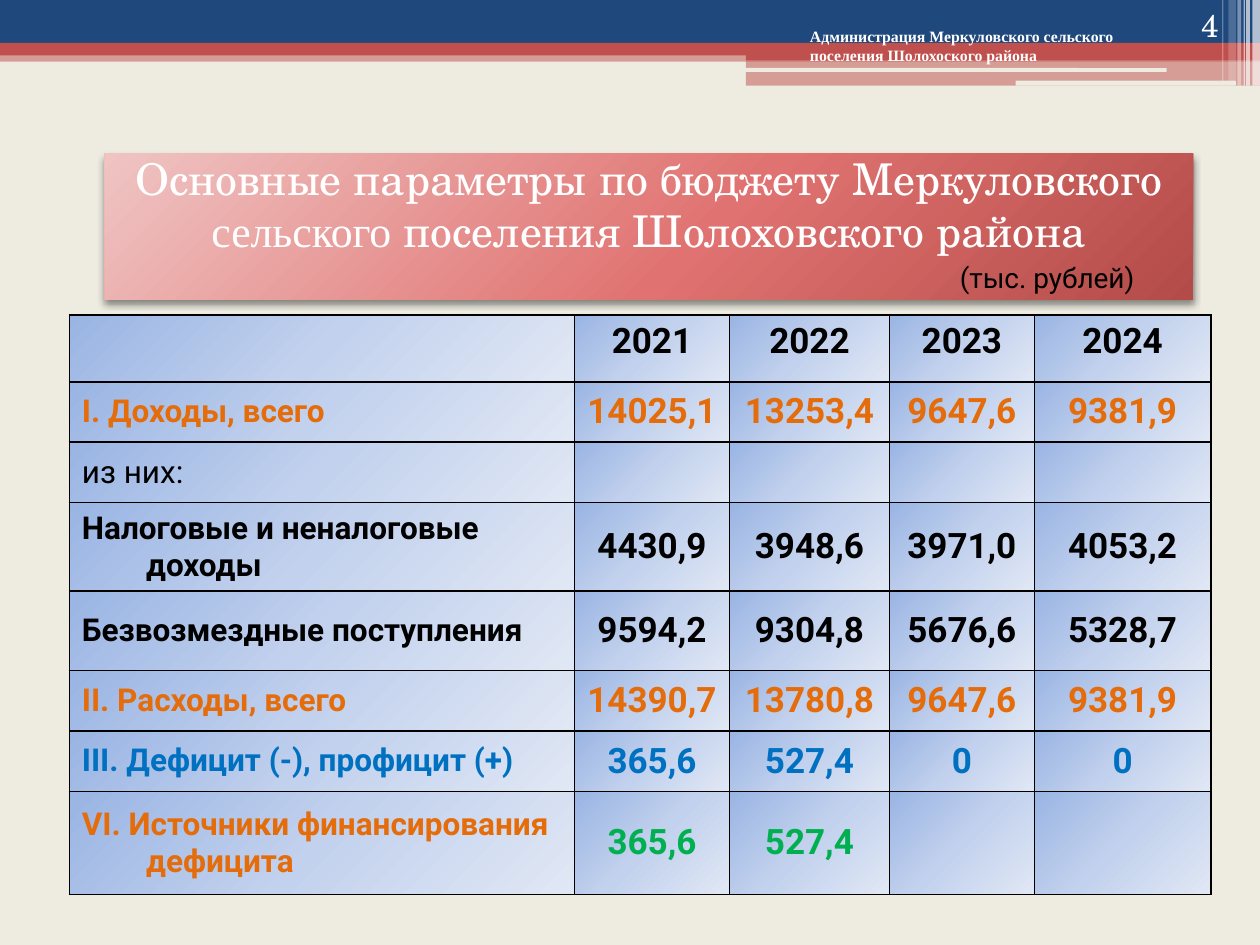
import dataclasses
import pptx
import pptx.util
import pptx.oxml
import pptx.oxml.ns
import pptx.dml.color
import pptx.enum.shapes
import pptx.enum.text

Kind = pptx.enum.shapes.MSO_SHAPE
Align = pptx.enum.text.PP_ALIGN
Anchor = pptx.enum.text.MSO_ANCHOR


@dataclasses.dataclass(frozen=True)
class Theme:
    cols: int = 100
    rows: int = 75
    cell: float = 0.1
    sand: str = "EEECE1"
    navy: str = "1F497D"
    red: str = "C0504D"
    white: str = "FFFFFF"
    black: str = "000000"
    amber: str = "E46C0A"
    blue: str = "0070C0"
    green: str = "00B050"
    rose: tuple = ((0, "EFC4C3"), (55, "E07371"), (100, "B34B48"))
    sky: tuple = ((0, "9AB5E4"), (50, "C2D1ED"), (100, "E1E8F5"))
    sans: str = "Roboto"
    serif: str = "TeX Gyre Schola"
    roman: str = "Times New Roman"
    head: int = 25
    value: int = 20
    label: int = 18
    unit: int = 16
    small: int = 9


T = Theme()


@dataclasses.dataclass(frozen=True)
class Box:
    x: float
    y: float
    w: float
    h: float

    def area(self, x, y, w, h):
        return Box(self.x + x, self.y + y, w, h)

    def place(self):
        return [grid(n) for n in (self.x, self.y, self.w, self.h)]


def grid(n):
    return pptx.util.Inches(n * T.cell)


def color(code):
    return pptx.dml.color.RGBColor.from_string(code)


def node(text):
    return pptx.oxml.parse_xml(text.replace(">", f" {pptx.oxml.ns.nsdecls('a')}>", 1))


def blend(stops, left, top, right, base):
    marks = "".join(
        f'<a:gs pos="{at * 1000}"><a:srgbClr val="{code}"/></a:gs>' for at, code in stops)
    return node(
        f'<a:gradFill rotWithShape="1"><a:gsLst>{marks}</a:gsLst><a:path path="circle">'
        f'<a:fillToRect l="{left * 1000}" t="{top * 1000}" r="{right * 1000}" '
        f'b="{base * 1000}"/></a:path></a:gradFill>')


def write(frame, text, font=T.sans, size=T.label, ink=T.black, bold=False,
          align=Align.LEFT, hang=0):
    para = frame.paragraphs[0]
    para.alignment = align
    if hang:
        props = para._p.get_or_add_pPr()
        props.set("marL", str(grid(hang)))
        props.set("indent", str(-grid(hang)))
    for words, face in [(text, font)] if isinstance(text, str) else text:
        run = para.add_run()
        run.text = words
        run.font.name = face
        run.font.size = pptx.util.Pt(size)
        run.font.bold = bold
        run.font.color.rgb = color(ink)


def note(slide, box, text, anchor=Anchor.TOP, **form):
    frame = slide.shapes.add_textbox(*box.place()).text_frame
    frame.word_wrap = True
    frame.vertical_anchor = anchor
    write(frame, text, **form)


def block(slide, box, fill, alpha=100, kind=Kind.RECTANGLE):
    shape = slide.shapes.add_shape(kind, *box.place())
    shape.shadow.inherit = False
    shape.line.fill.background()
    shape.fill.solid()
    shape.fill.fore_color.rgb = color(fill)
    if alpha < 100:
        tint = shape._element.spPr.find(".//" + pptx.oxml.ns.qn("a:srgbClr"))
        tint.append(node(f'<a:alpha val="{alpha * 1000}"></a:alpha>'))
    return shape


def header(slide, box):
    bands = (
        (0, 4, 100, 0.9, T.red, 50), (0, 0, 100, 3.4, T.navy, 100),
        (0, 3.4, 100, 1, T.red, 100), (59.2, 3.9, 40.8, 0.9, T.red, 100),
        (59.2, 4.8, 40.8, 2, T.red, 50))
    for *span, fill, alpha in bands:
        block(slide, box.area(*span), fill, alpha)
    for span in ((59.1, 5.4, 33.5, 0.3), (80.6, 6.4, 17.5, 0.4)):
        block(slide, box.area(*span), T.sand, kind=Kind.ROUNDED_RECTANGLE)
    bars = ((99.4, 0.6, 6.8, 65), (98.9, 0.3, 6.8, 65), (98.7, 0.1, 6.8, 60),
            (98.2, 0.3, 6.8, 40), (97.5, 0.6, 6.4, 20), (97, 0.1, 6.4, 30))
    for left, wide, tall, alpha in bars:
        block(slide, box.area(left, 0, wide, tall), T.white, alpha)
    note(slide, box.area(89.4, 0, 8.3, 4), "4", Anchor.BOTTOM,
         font=T.serif, ink=T.white, align=Align.RIGHT)
    note(slide, box.area(63.3, 1.6, 31.1, 4),
         "Администрация Меркуловского сельского поселения Шолохоского района",
         font=T.roman, size=T.small, ink=T.white, bold=True)


def title(slide, box):
    shape = block(slide, box, T.red)
    props = shape._element.spPr
    solid = props.find(pptx.oxml.ns.qn("a:solidFill"))
    props.replace(solid, blend(T.rose, -40, -90, 140, 190))
    props.find(pptx.oxml.ns.qn("a:effectLst")).append(node(
        '<a:outerShdw blurRad="50800" dist="25400" dir="5400000" rotWithShape="0">'
        f'<a:srgbClr val="{T.black}"><a:alpha val="45000"/></a:srgbClr></a:outerShdw>'))
    frame = shape.text_frame
    frame.word_wrap = True
    frame.vertical_anchor = Anchor.MIDDLE
    frame.margin_bottom = grid(4.1)
    write(frame, [("Основные параметры по бюджету Меркуловского ", T.serif),
                  ("сельского", T.roman),
                  (" поселения Шолоховского района", T.serif)],
          size=T.head, ink=T.white, align=Align.CENTER)


def ledger(slide, box):
    wide = (40.1, 12.3, 12.7, 11.5, 14)
    lines = (
        (5.3, T.black, T.black, "", "2021", "2022", "2023", "2024"),
        (4.8, T.amber, T.amber, "I. Доходы, всего", "14025,1", "13253,4", "9647,6", "9381,9"),
        (4.8, T.black, T.black, "из них:", "", "", "", ""),
        (5.6, T.black, T.black, "Налоговые и неналоговые доходы",
         "4430,9", "3948,6", "3971,0", "4053,2"),
        (6.3, T.black, T.black, "Безвозмездные поступления",
         "9594,2", "9304,8", "5676,6", "5328,7"),
        (4.8, T.amber, T.amber, "II. Расходы, всего", "14390,7", "13780,8", "9647,6", "9381,9"),
        (4.8, T.blue, T.blue, "III. Дефицит (-), профицит (+)", "365,6", "527,4", "0", "0"),
        (8.2, T.amber, T.green, "VI. Источники финансирования дефицита",
         "365,6", "527,4", "", ""))
    table = slide.shapes.add_table(len(lines), len(wide), *box.place()).table
    table.first_row = table.horz_banding = False
    for col, width in zip(table.columns, wide):
        col.width = grid(width)
    for r, (tall, lead, ink, *texts) in enumerate(lines):
        table.rows[r].height = grid(tall)
        for c, text in enumerate(texts):
            cell = table.cell(r, c)
            cell.vertical_anchor = Anchor.MIDDLE if r else Anchor.TOP
            finish(cell)
            if text:
                write(cell.text_frame, text, hang=5.1, bold=text != "из них:",
                      size=T.value if c else T.label, ink=ink if c else lead,
                      align=Align.CENTER if c else Align.LEFT)
    note(slide, box.area(69.7, -4.8, 22, 3.7), "(тыс. рублей)", size=T.unit)


def finish(cell):
    props = cell._tc.get_or_add_tcPr()
    for side in "LRTB":
        props.append(node(
            f'<a:ln{side} w="12700"><a:solidFill><a:srgbClr val="{T.black}"/>'
            f'</a:solidFill></a:ln{side}>'))
    props.append(blend(T.sky, 0, 0, 100, 100))


def main():
    deck = pptx.Presentation()
    deck.slide_width, deck.slide_height = grid(T.cols), grid(T.rows)
    slide = deck.slides.add_slide(deck.slide_layouts[6])
    slide.background.fill.solid()
    slide.background.fill.fore_color.rgb = color(T.sand)
    header(slide, Box(0, 0, T.cols, 6.8))
    title(slide, Box(8.3, 12.2, 86.4, 11.6))
    ledger(slide, Box(5.5, 25, 90.6, 44.6))
    deck.save("out.pptx")


if __name__ == "__main__":
    main()
